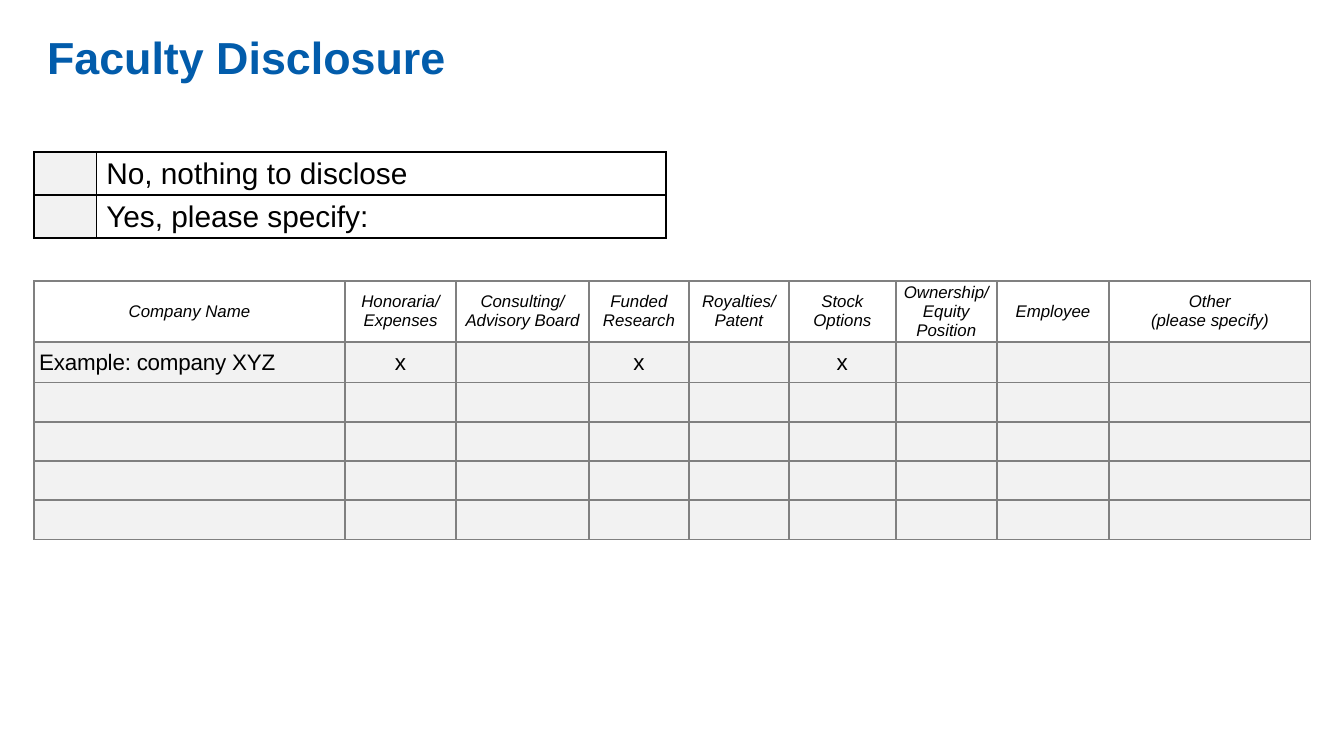
from lxml.etree import SubElement
from pptx import Presentation
from pptx.dml.color import RGBColor
from pptx.enum.text import MSO_ANCHOR, PP_ALIGN
from pptx.oxml.ns import qn
from pptx.util import Cm, Pt

LEFT = 0.64
SHADE = "F2F2F2"
COLUMN_WIDTHS = [5.88, 2.1, 2.51, 1.89, 1.89, 2.02, 1.91, 2.12, 3.81]
ROW_HEIGHTS = [1.14, 0.77] + [0.74] * 4
HEADINGS = [
    "Company Name", "Honoraria/\nExpenses", "Consulting/ Advisory Board",
    "Funded Research", "Royalties/ Patent", "Stock Options",
    "Ownership/ Equity Position", "Employee", "Other\n(please specify)",
]
EXAMPLE = ["Example: company XYZ", "x", "", "x", "", "x", "", "", ""]
ANSWERS = ["No, nothing to disclose", "Yes, please specify:"]

SIDE_MARGINS = {"margin_left": Cm(0.1), "margin_right": Cm(0.1)}
GRID_CELL = SIDE_MARGINS | {
    "margin_top": 0, "margin_bottom": 0, "vertical_anchor": MSO_ANCHOR.MIDDLE,
}
ANSWER_CELL = {
    "margin_left": Cm(0.19), "margin_right": Cm(0.19),
    "margin_top": Cm(0.02), "margin_bottom": 0,
    "vertical_anchor": MSO_ANCHOR.TOP,
}


def color(hex_value):
    return RGBColor.from_string(hex_value)


def apply(target, values):
    for name, value in values.items():
        setattr(target, name, value)


class DisclosureSlide:
    font_name = "Arial"

    def __init__(self, slide):
        self.slide = slide

    def style_text(self, frame, size, ink="000000", spacing=0,
                   paragraph_format=None, **font_format):
        for paragraph in frame.paragraphs:
            apply(paragraph, paragraph_format or {})
            for run in paragraph.runs:
                apply(run.font, {"name": self.font_name, "size": Pt(size)} | font_format)
                run.font.color.rgb = color(ink)
                if spacing:
                    run.font._element.set("spc", str(spacing))
            if not paragraph.runs:
                # Keeps an empty cell from growing to the default text size
                SubElement(paragraph._p, qn("a:endParaRPr"), sz=str(size * 100))

    def title(self, text, left, top, width, height):
        frame = self.slide.shapes.add_textbox(
            Cm(left), Cm(top), Cm(width), Cm(height)).text_frame
        apply(frame, {"text": text, "word_wrap": True,
                      "vertical_anchor": MSO_ANCHOR.MIDDLE})
        self.style_text(frame, 24, "025CAB", bold=True)

    def table(self, left, top, widths, heights):
        table = self.slide.shapes.add_table(
            len(heights), len(widths), Cm(left), Cm(top),
            Cm(sum(widths)), Cm(sum(heights))).table
        apply(table, {"first_row": False, "horz_banding": False})
        for column, width in zip(table.columns, widths):
            column.width = Cm(width)
        for row, height in zip(table.rows, heights):
            row.height = Cm(height)
        return table

    def cell(self, cell, text, cell_format, border, fill=None, **text_style):
        apply(cell, {"text": text} | cell_format)
        properties = cell._tc.get_or_add_tcPr()
        for side in ("lnL", "lnR", "lnT", "lnB"):
            line = SubElement(properties, qn(f"a:{side}"), w=str(Pt(1)))
            SubElement(SubElement(line, qn("a:solidFill")), qn("a:srgbClr"), val=border)
        if fill:
            cell.fill.solid()
            cell.fill.fore_color.rgb = color(fill)
        else:
            cell.fill.background()
        self.style_text(cell.text_frame, **text_style)

    def interests(self):
        table = self.table(LEFT, 5.31, COLUMN_WIDTHS, ROW_HEIGHTS)
        blank_rows = [[""] * len(HEADINGS)] * (len(ROW_HEIGHTS) - 2)
        for r, entries in enumerate([HEADINGS, EXAMPLE, *blank_rows]):
            header = r == 0
            for c, entry in enumerate(entries):
                company = c == 0 and not header
                self.cell(
                    table.cell(r, c), entry, GRID_CELL, "808080",
                    fill=None if header else SHADE,
                    size=9 if header else 12, italic=header,
                    spacing=-10 if company else 0,
                    paragraph_format={
                        "alignment": PP_ALIGN.LEFT if company else PP_ALIGN.CENTER})

    def answers(self):
        table = self.table(LEFT, 2.87, [1.18, 10.77], [0.81] * len(ANSWERS))
        for r, answer in enumerate(ANSWERS):
            self.cell(table.cell(r, 0), "", ANSWER_CELL, "000000", fill=SHADE, size=12)
            self.cell(table.cell(r, 1), answer, ANSWER_CELL, "000000", size=16,
                      paragraph_format={"line_spacing": 1.15})


def main():
    presentation = Presentation()
    apply(presentation, {"slide_width": Cm(25.4), "slide_height": Cm(14.28)})
    page = DisclosureSlide(presentation.slides.add_slide(presentation.slide_layouts[6]))
    page.title("Faculty Disclosure", LEFT, 0.38, 14.78, 1.37)
    page.interests()
    page.answers()
    presentation.save("out.pptx")


if __name__ == "__main__":
    main()
